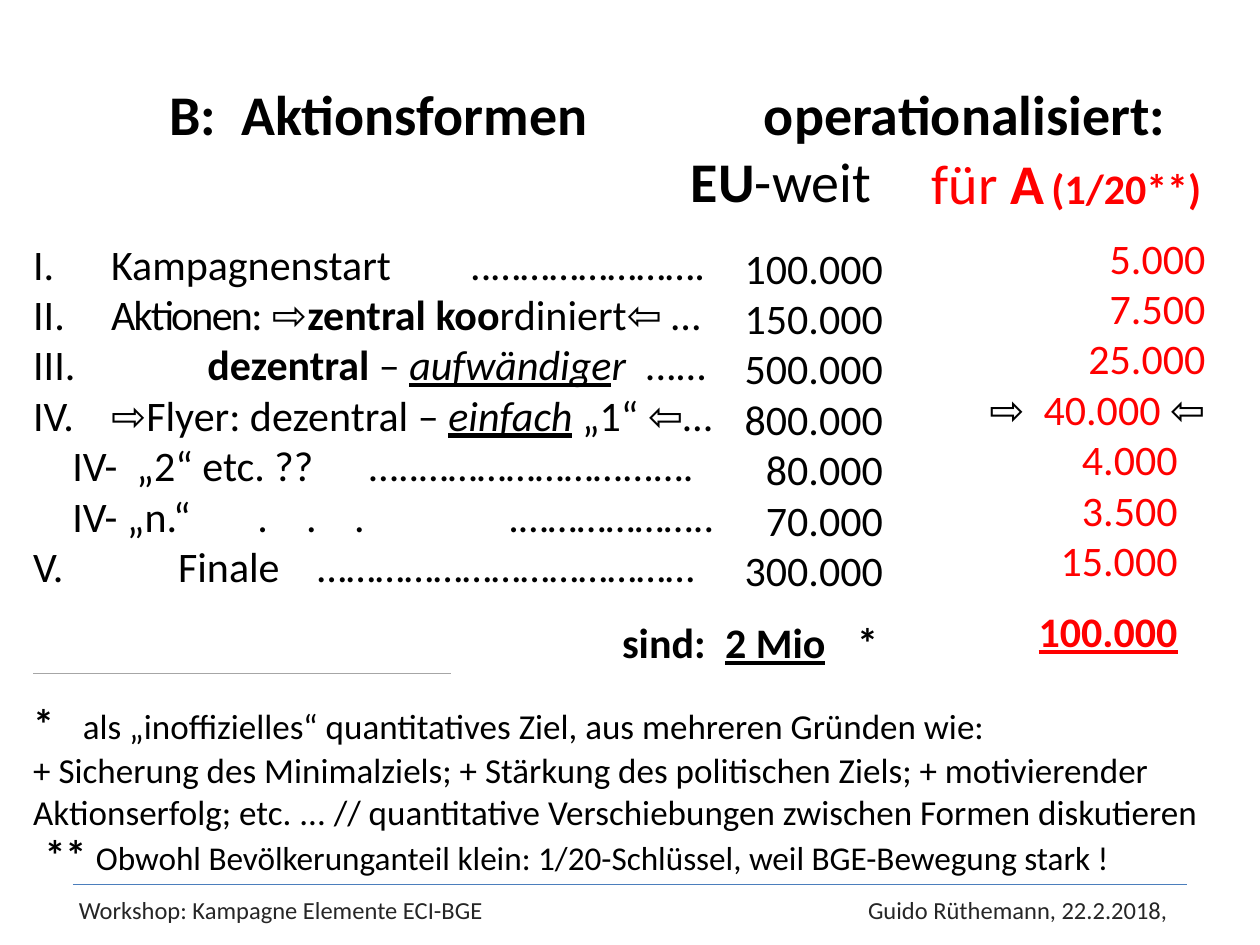
from lxml.etree import SubElement
from pptx import Presentation
from pptx.dml.color import RGBColor
from pptx.enum.shapes import MSO_CONNECTOR, MSO_SHAPE
from pptx.enum.text import MSO_ANCHOR, PP_ALIGN
from pptx.oxml.ns import qn
from pptx.util import Cm, Pt

FONT = "Calibri"
COLORS = {"black": "000000", "red": "FF0000", "white": "FFFFFF",
          "footer": "262626", "blue": "4B7EBC", "grey": "A6A6A6"}
LEFT = 0.67      # left text edge in cm
HANG = 1.57      # width of the numbering column in cm

# Each row: tab stops in cm, numbered or not, runs
FORMS = [
    ([8.81], True, [("Kampagnenstart\t..………………….", {})]),
    ([], True, [("Aktionen:", {"spacing": -1}), (" ⇨", {}),
                ("zentral koo", {"bold": True}), ("rdiniert⇦ …", {})]),
    ([3.51], True, [("\t", {}), ("dezentral ", {"bold": True}), ("– ", {}),
                    ("aufwändige", {"italic": True, "underline": True}),
                    ("r", {"italic": True}), ("  ...…", {})]),
    ([], True, [("⇨Flyer: dezentral – ", {}),
                ("einfach", {"italic": True, "underline": True}),
                (" „1“ ⇦…", {})]),
    ([0.79, 6.77], False, [("\tIV-  „2“ etc. ??\t…..…………………...….", {})]),
    ([0.79, 4.52, 5.5, 6.47, 9.58], False,
     [("\tIV- „n.“\t.\t.\t.\t.………………..", {})]),
    ([2.92, 5.73], False, [("V.\tFinale\t…………………………………", {})]),
]
EU_GOALS = ["100.000", "150.000", "500.000", "800.000",
            "80.000", "70.000", "300.000"]
A_GOALS = ["5.000", "7.500", "25.000", "40.000", "4.000", "3.500", "15.000"]


def rgb(name):
    return RGBColor.from_string(COLORS[name])


def add_run(p, text, size=24, color="black", bold=False, italic=False,
            underline=False, spacing=0):
    r = p.add_run()
    r.text = text
    f = r.font
    f.name, f.size, f.color.rgb = FONT, Pt(size), rgb(color)
    f.bold, f.italic, f.underline = bold, italic, underline
    if spacing:
        r._r.get_or_add_rPr().set("spc", str(spacing * 100))


def set_frame(tf, inset=0.0, anchor=MSO_ANCHOR.TOP):
    tf.word_wrap = True
    tf.vertical_anchor = anchor
    tf.margin_left = tf.margin_right = Cm(inset)
    tf.margin_top = tf.margin_bottom = 0


def add_box(s, left, top, width, height):
    tf = s.shapes.add_textbox(Cm(left), Cm(top), Cm(width), Cm(height)).text_frame
    set_frame(tf)
    return tf


def next_paragraph(tf, align=PP_ALIGN.LEFT):
    p = tf.paragraphs[0]
    if p.runs:
        p = tf.add_paragraph()
    p.alignment = align
    return p


def set_tabs(p, stops, align="l"):
    tabs = SubElement(p._p.get_or_add_pPr(), qn("a:tabLst"))
    for stop in stops:
        SubElement(tabs, qn("a:tab"), pos=str(Cm(stop)), algn=align)


def set_numbered(p):
    pPr = p._p.get_or_add_pPr()
    pPr.set("marL", str(Cm(HANG)))
    pPr.set("indent", str(-Cm(HANG)))
    SubElement(pPr, qn("a:buFont"), typeface=FONT)
    SubElement(pPr, qn("a:buAutoNum"), type="romanUcPeriod")


def add_line(s, x1, x2, y, color, width):
    c = s.shapes.add_connector(MSO_CONNECTOR.STRAIGHT, Cm(x1), Cm(y), Cm(x2), Cm(y))
    c.line.color.rgb, c.line.width = rgb(color), Pt(width)
    SubElement(c._element.spPr, qn("a:effectLst"))


def add_headings(s):
    title = s.shapes.title
    title.left, title.top, title.width, title.height = Cm(3.41), Cm(1.6), Cm(9), Cm(1.4)
    set_frame(title.text_frame)
    add_run(next_paragraph(title.text_frame), "B:  Aktionsformen", size=32, bold=True)

    p = next_paragraph(add_box(s, 14.5, 1.6, 9, 1.4), PP_ALIGN.RIGHT)
    add_run(p, "operationalisiert:", size=32, bold=True)

    p = next_paragraph(add_box(s, 13.93, 2.95, 4.5, 1.4))
    add_run(p, "EU", size=32, bold=True)
    add_run(p, "-weit", size=32)

    p = next_paragraph(add_box(s, 18.78, 3, 6, 1.4))
    add_run(p, "für ", size=32, color="red")
    add_run(p, "A", size=32, color="red", bold=True)
    add_run(p, " ", size=18, color="red", bold=True)
    add_run(p, "(1/20**)", color="red", bold=True)


def add_forms(s):
    tf = add_box(s, LEFT, 4.8, 14, 7.2)
    for stops, numbered, runs in FORMS:
        p = next_paragraph(tf)
        if numbered:
            set_numbered(p)
        set_tabs(p, stops)
        for text, fmt in runs:
            add_run(p, text, **fmt)


def add_goals(s):
    # EU-wide column
    tf = add_box(s, 14, 4.88, 3.8, 7.2)
    for goal in EU_GOALS:
        add_run(next_paragraph(tf, PP_ALIGN.RIGHT), goal)
    p = next_paragraph(add_box(s, 12.54, 12.43, 5.5, 1.05))
    set_tabs(p, [2.08, 4.74])
    add_run(p, "sind:\t", bold=True)
    add_run(p, "2 Mio", bold=True, underline=True)
    add_run(p, "\t*", bold=True)

    # Column for A, with its total
    tf = add_box(s, 18.8, 4.68, 5.5, 8.6)
    for goal in A_GOALS:
        p = next_paragraph(tf, PP_ALIGN.RIGHT)
        main_form = goal == "40.000"
        if main_form:
            add_run(p, "⇨  ")
        add_run(p, goal, color="red")
        if main_form:
            add_run(p, " ⇦")
        if goal == "4.000":
            p._p.get_or_add_pPr().set("marR", str(Cm(0.56)))
    p = next_paragraph(tf, PP_ALIGN.RIGHT)
    p.space_before = Pt(12)
    add_run(p, "100.000", color="red", bold=True, underline=True)


def add_footnotes(s):
    add_line(s, LEFT, 9.1, 13.57, "grey", 0.5)
    tf = add_box(s, LEFT, 14.07, 23.8, 2.75)
    p = next_paragraph(tf)
    set_tabs(p, [1])
    add_run(p, "*", bold=True)
    add_run(p, "\tals „inoffizielles“ quantitatives Ziel, aus mehreren Gründen wie:", size=20)
    add_run(next_paragraph(tf),
            "+ Sicherung des Minimalziels; + Stärkung des politischen Ziels; "
            "+ motivierender Aktionserfolg; etc. ... // quantitative "
            "Verschiebungen zwischen Formen diskutieren", size=20)

    p = next_paragraph(add_box(s, 0.9, 16.7, 23.4, 1.05))
    add_run(p, "** ", bold=True)
    add_run(p, "Obwohl Bevölkerunganteil klein: 1/20-Schlüssel, "
               "weil BGE-Bewegung stark !", size=19)


def add_footer(s):
    sp = s.shapes.add_shape(MSO_SHAPE.RECTANGLE, Cm(1.27), Cm(17.83), Cm(22.66), Cm(1.02))
    sp.shadow.inherit = False
    sp.fill.solid()
    sp.fill.fore_color.rgb = sp.line.color.rgb = rgb("white")
    sp.line.width = Pt(0.75)
    set_frame(sp.text_frame, inset=0.32, anchor=MSO_ANCHOR.MIDDLE)
    p = next_paragraph(sp.text_frame)
    set_tabs(p, [21.95], align="r")
    add_run(p, "Workshop: Kampagne Elemente ECI-BGE\tGuido Rüthemann, 22.2.2018,",
            size=14, color="footer")
    add_line(s, 1.47, 23.93, 17.83, "blue", 0.75)


def main():
    prs = Presentation()
    prs.slide_width, prs.slide_height = Cm(25.4), Cm(19.05)
    s = prs.slides.add_slide(prs.slide_layouts[5])
    add_headings(s)
    add_forms(s)
    add_goals(s)
    add_footnotes(s)
    add_footer(s)
    prs.save("out.pptx")


if __name__ == "__main__":
    main()
